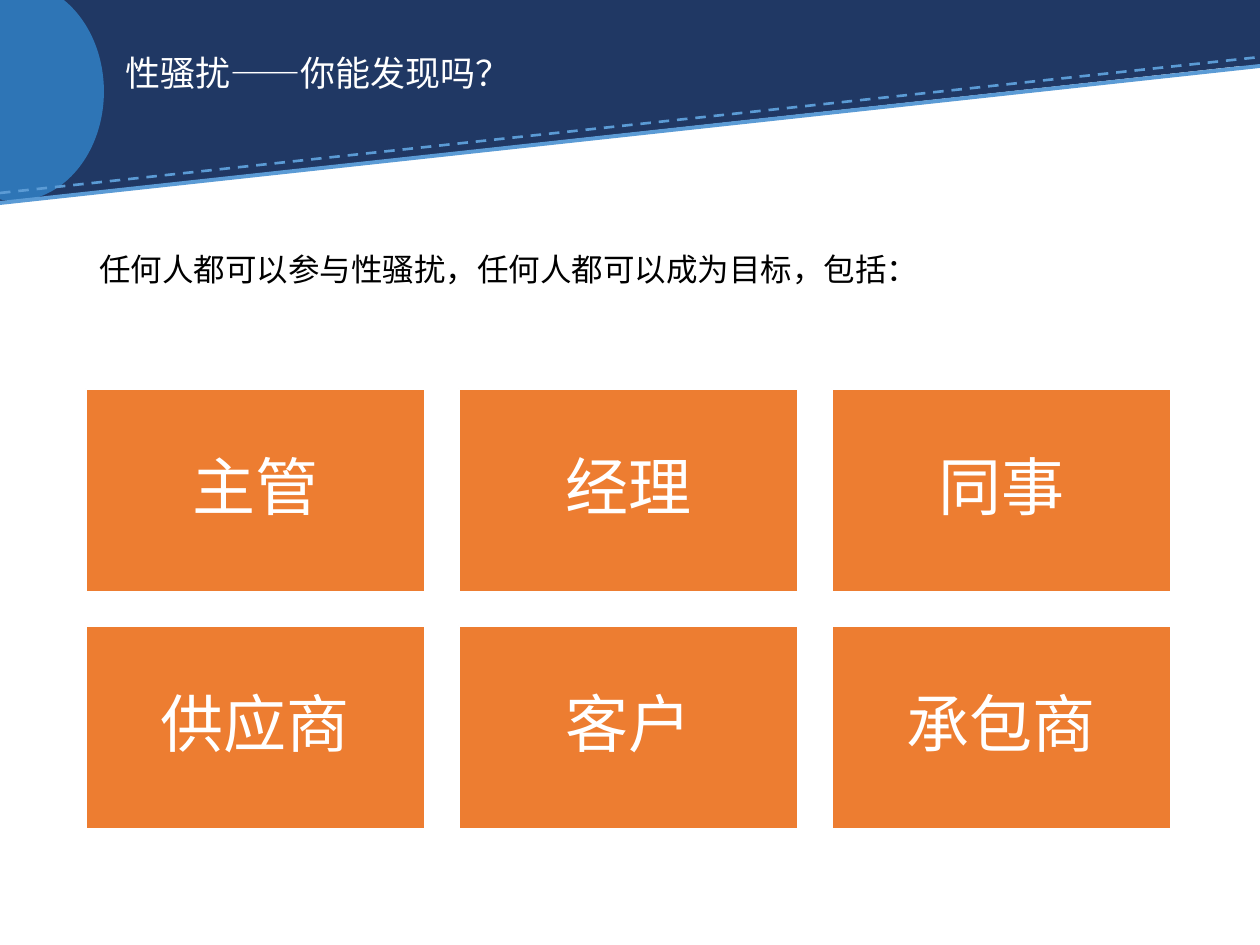
from lxml.etree import SubElement
from pptx import Presentation
from pptx.dml.color import RGBColor
from pptx.enum.dml import MSO_LINE
from pptx.enum.shapes import MSO_CONNECTOR, MSO_SHAPE
from pptx.enum.text import MSO_ANCHOR, PP_ALIGN
from pptx.oxml.ns import qn
from pptx.util import Pt

PX = 914400 // 126
FONT = "Noto Sans CJK SC"


def color(value):
    return RGBColor.from_string(value)


def write(s, text, size, fill, align=PP_ALIGN.LEFT, spacing=0.9):
    tf = s.text_frame
    tf.word_wrap = True
    tf.vertical_anchor = MSO_ANCHOR.MIDDLE
    p = tf.paragraphs[0]
    p.text = text
    p.alignment = align
    p.line_spacing = spacing
    p.font.size = Pt(size)
    p.font.name = FONT
    p.font.color.rgb = color(fill)
    SubElement(p.font._element, qn("a:ea"), typeface=FONT)


prs = Presentation()
prs.slide_width = 1260 * PX
prs.slide_height = 945 * PX
slide = prs.slides.add_slide(prs.slide_layouts[6])
shapes = slide.shapes

banner = [
    (MSO_SHAPE.RECTANGLE, 0, 0, 1260, 66, "203864"),
    (MSO_SHAPE.RIGHT_TRIANGLE, 0, 64, 1260, 138, "203864"),
    (MSO_SHAPE.OVAL, -74, -18, 178, 219, "2E75B6"),
]
for kind, x, y, w, h, fill in banner:
    s = shapes.add_shape(kind, x * PX, y * PX, w * PX, h * PX)
    s.shadow.inherit = False
    s.fill.solid()
    s.fill.fore_color.rgb = color(fill)
    s.line.fill.background()
    if kind == MSO_SHAPE.RIGHT_TRIANGLE:
        s._element.spPr.get_or_add_xfrm().set("flipV", "1")

for left_y, right_y, width, dash in [
    (193, 57, 1.5, MSO_LINE.DASH),
    (203, 66, 2.25, MSO_LINE.SOLID),
]:
    s = shapes.add_connector(
        MSO_CONNECTOR.STRAIGHT, 0, left_y * PX, 1260 * PX, right_y * PX
    )
    s.line.color.rgb = color("5B9BD5")
    s.line.width = Pt(width)
    s.line.dash_style = dash
    SubElement(s._element.spPr, qn("a:effectLst"))

title = shapes.add_textbox(113 * PX, 25 * PX, 1017 * PX, 101 * PX)
write(title, "性骚扰——你能发现吗？", 20, "FFFFFF")

roles = ["主管", "经理", "同事", "供应商", "客户", "承包商"]
for i, role in enumerate(roles):
    row, col = divmod(i, 3)
    x, y = 86 + 373 * col, 389 + 237 * row
    s = shapes.add_shape(MSO_SHAPE.RECTANGLE, x * PX, y * PX, 339 * PX, 203 * PX)
    s.shadow.inherit = False
    s.fill.solid()
    s.fill.fore_color.rgb = color("ED7D31")
    s.line.color.rgb = color("FFFFFF")
    s.line.width = Pt(1)
    tf = s.text_frame
    tf.margin_left = tf.margin_right = tf.margin_top = tf.margin_bottom = 19 * PX
    write(s, role, 36, "FFFFFF", PP_ALIGN.CENTER)

intro = shapes.add_textbox(87 * PX, 243 * PX, 1142 * PX, 51 * PX)
write(intro, "任何人都可以参与性骚扰，任何人都可以成为目标，包括：", 18, "000000", spacing=1.0)

prs.save("out.pptx")
